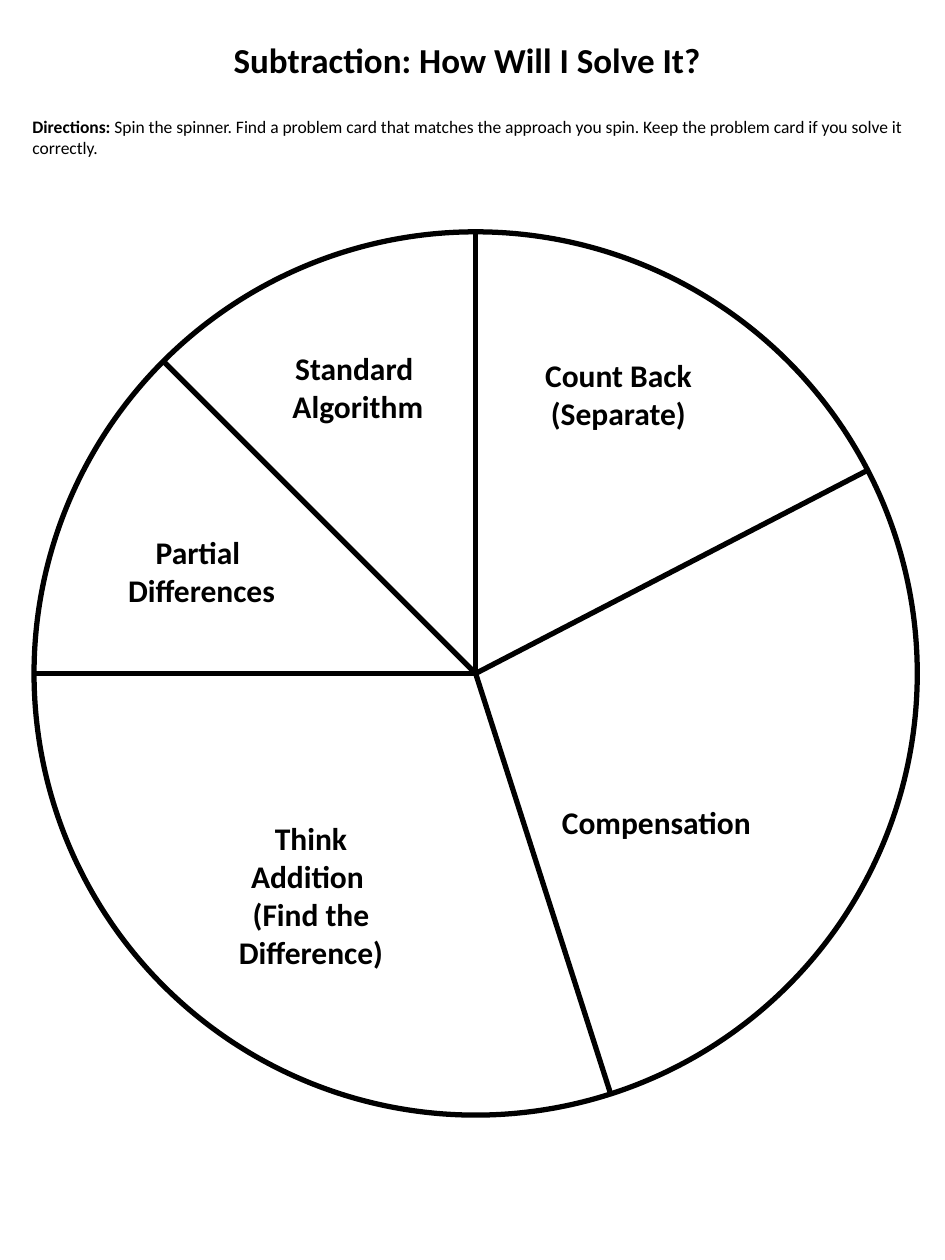
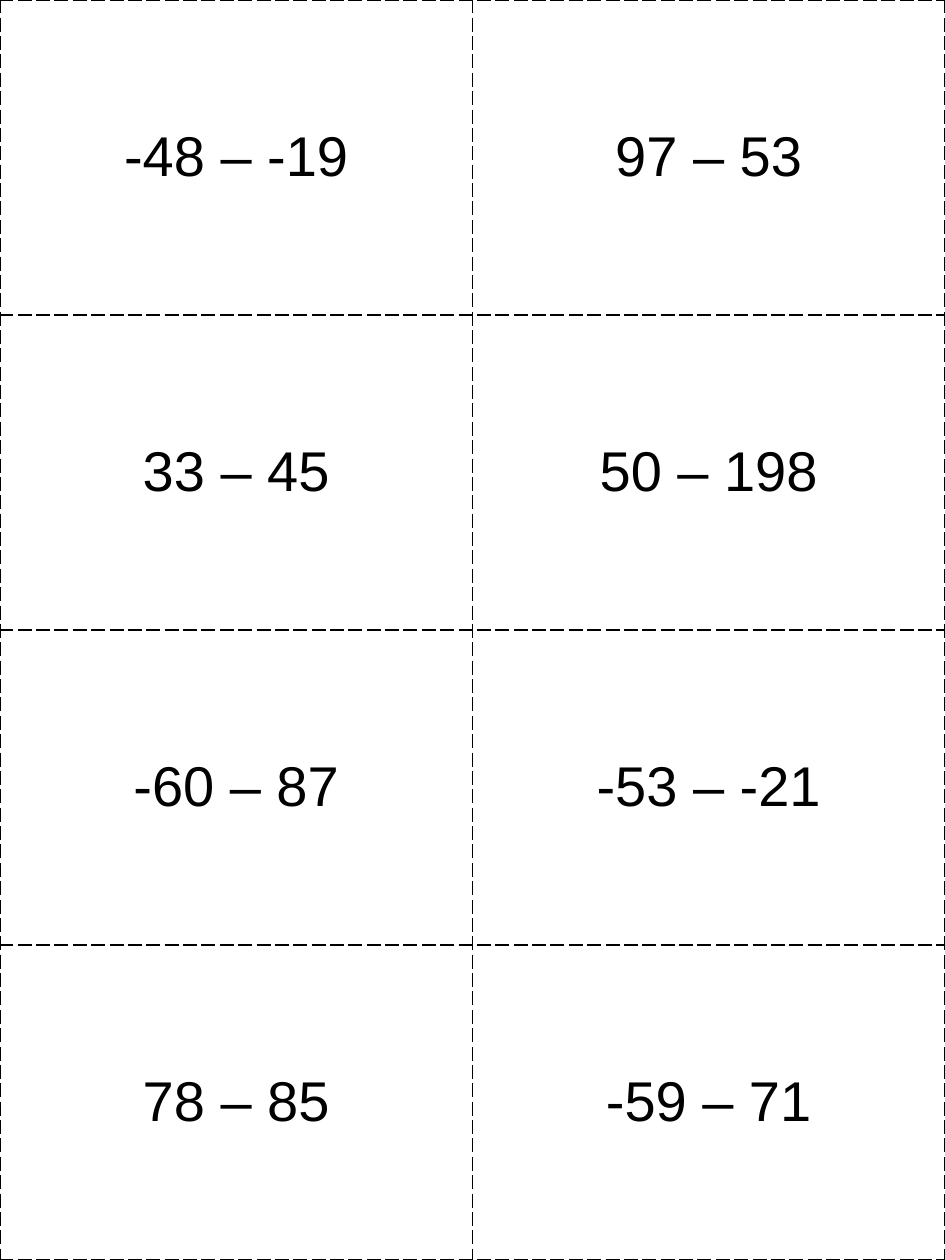
from math import cos, radians, sin
from lxml import etree
from pptx import Presentation, util as u
from pptx.dml.color import RGBColor
from pptx.enum import shapes, text
from pptx.oxml import ns

HUES = {"ink": "000000", "paper": "FFFFFF"}
WIDE, HIGH = 7.5, 10
HEAD = (0.16, 0.16, 7.16, 0.62)
NOTE = (0.16, 0.78, 7.16, 0.62)
DIAL = (0.27, 1.84, 7.01, 7.01)
PAGE = (0, 0, WIDE, HIGH)
SPOKES = [0, 62.6, 162.2, 270, 315]
LABELS = [
    (20.4, 8.3, ["Standard ", "Algorithm"]),
    (54.2, 57.5, ["Compensation"]),
    (2.7, 29.1, ["Partial ", "Differences"]),
    (15.1, 65.8, ["Think", "Addition ", "(Find the Difference)"]),
    (49.9, 9.1, ["Count Back (Separate)"]),
]
CARDS = [
    ["-48 – -19", "97 – 53"],
    ["33 – 45", "50 – 198"],
    ["-60 – 87", "-53 – -21"],
    ["78 – 85", "-59 – 71"],
]


def hue(name):
    """Give the colour of that name."""
    return RGBColor.from_string(HUES[name])


def inch(box):
    """Turn a box in inches into lengths."""
    return [u.Inches(n) for n in box]


def paint(shape, line, width):
    """Fill a shape with paper and draw its outline."""
    shape.fill.solid()
    shape.fill.fore_color.rgb = hue("paper")
    shape.line.color.rgb = hue(line)
    shape.line.width = u.Pt(width)


def write(frame, lines, size, font="Calibri", side=text.PP_ALIGN.CENTER):
    """Write lines of (words, bold) runs into a text frame."""
    for i, runs in enumerate(lines):
        para = frame.add_paragraph() if i else frame.paragraphs[0]
        para.alignment = side
        for words, bold in runs:
            run = para.add_run()
            run.text = words
            run.font.name, run.font.size = font, u.Pt(size)
            run.font.bold = bold
            run.font.color.rgb = hue("ink")


def settle(frame):
    """Wrap a frame, centre it upright and keep its size."""
    frame.word_wrap = True
    frame.auto_size = text.MSO_AUTO_SIZE.NONE
    frame.vertical_anchor = text.MSO_ANCHOR.MIDDLE


def head(slide, box, words):
    """Place the title in its box."""
    title = slide.shapes.title
    title.left, title.top, title.width, title.height = inch(box)
    paint(title, "paper", 1)
    settle(title.text_frame)
    write(title.text_frame, [[(words, True)]], 20)


def note(slide, box, runs):
    """Place the directions in their box."""
    shape = slide.shapes.add_shape(shapes.MSO_SHAPE.RECTANGLE, *inch(box))
    shape.shadow.inherit = False
    paint(shape, "paper", 1)
    settle(shape.text_frame)
    write(shape.text_frame, [runs], 10, side=text.PP_ALIGN.LEFT)


def spoke(slide, box, angle):
    """Draw a line from the hub to the rim, clockwise from the top."""
    left, top, wide, high = box
    x, y = left + wide / 2, top + high / 2
    turn = radians(angle)
    ends = (x, y, x + wide / 2 * sin(turn), y - high / 2 * cos(turn))
    line = slide.shapes.add_connector(shapes.MSO_CONNECTOR.STRAIGHT, *inch(ends))
    line.line.color.rgb = hue("ink")
    line.line.width = u.Pt(3)
    etree.SubElement(line._element.spPr, ns.qn("a:effectLst"))


def label(slide, box, x, y, lines):
    """Place a sector label at percentages of the dial."""
    left, top, wide, high = box
    spot = (left + wide * x / 100, top + high * y / 100, 2.28, 1.3)
    frame = slide.shapes.add_textbox(*inch(spot)).text_frame
    settle(frame)
    write(frame, [[(line, True)] for line in lines], 18)


def dial(slide, box):
    """Draw the spinner with its spokes and labels."""
    ring = slide.shapes.add_shape(shapes.MSO_SHAPE.OVAL, *inch(box))
    ring.shadow.inherit = False
    paint(ring, "ink", 3)
    for angle in SPOKES:
        spoke(slide, box, angle)
    for x, y, lines in LABELS:
        label(slide, box, x, y, lines)


def edge(cell):
    """Give a cell dashed borders, ahead of its fill."""
    props = cell._tc.get_or_add_tcPr()
    for i, side in enumerate(("lnL", "lnR", "lnT", "lnB")):
        line = etree.Element(ns.qn("a:" + side), w=str(u.Pt(1)))
        fill = etree.SubElement(line, ns.qn("a:solidFill"))
        etree.SubElement(fill, ns.qn("a:srgbClr"), val=HUES["ink"])
        etree.SubElement(line, ns.qn("a:prstDash"), val="lgDash")
        props.insert(i, line)


def cards(slide, box):
    """Fill the box with a table of problem cards."""
    rows, cols = len(CARDS), len(CARDS[0])
    table = slide.shapes.add_table(rows, cols, *inch(box)).table
    table.first_row = table.horz_banding = False
    for r, row in enumerate(CARDS):
        for c, words in enumerate(row):
            cell = table.cell(r, c)
            cell.fill.solid()
            cell.fill.fore_color.rgb = hue("paper")
            cell.vertical_anchor = text.MSO_ANCHOR.MIDDLE
            write(cell.text_frame, [[(words, False)]], 32, "Arial")
            edge(cell)


def main():
    """Build both slides and save them."""
    deck = Presentation()
    deck.slide_width, deck.slide_height = inch((WIDE, HIGH))
    spin = deck.slides.add_slide(deck.slide_layouts[5])
    head(spin, HEAD, "Subtraction: How Will I Solve It? ")
    note(spin, NOTE, [
        ("Directions:", True),
        (" Spin the spinner. Find a problem card that matches the approach "
         "you spin. Keep the problem card if you solve it correctly.", False),
    ])
    dial(spin, DIAL)
    cards(deck.slides.add_slide(deck.slide_layouts[6]), PAGE)
    deck.save("out.pptx")


if __name__ == "__main__":
    main()
